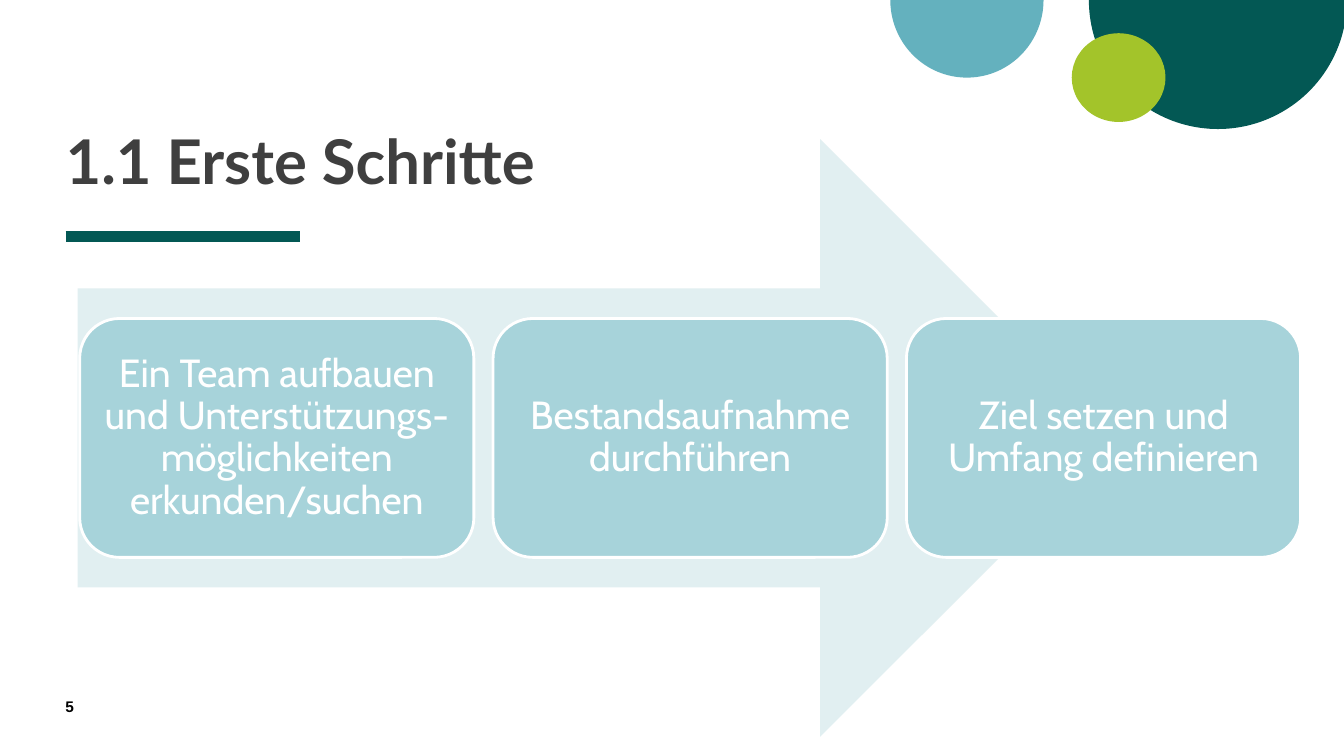
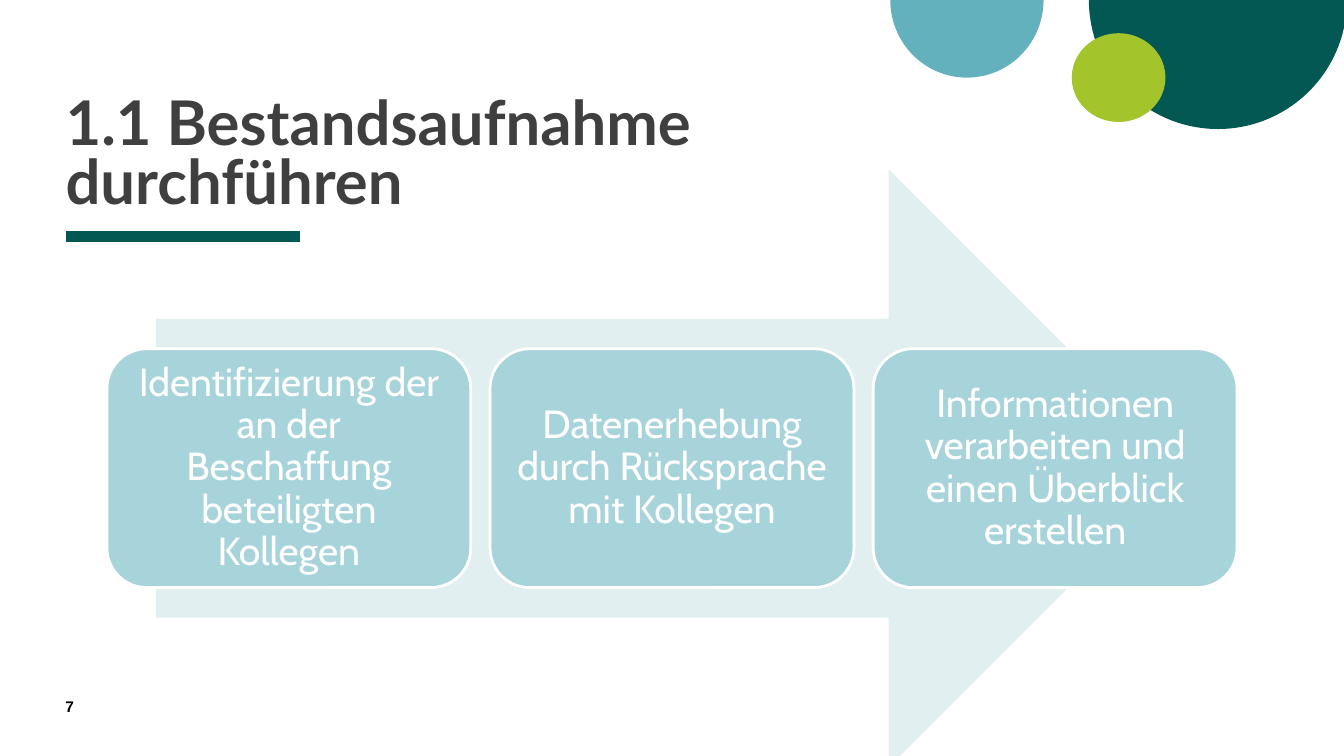
from lxml import etree
from pptx import Presentation
from pptx import util as u
from pptx.dml.color import RGBColor
from pptx.enum import shapes, text
from pptx.oxml.ns import qn

PX = 9144  # EMU per px, 100 px to the inch
HUES = {"dark": "035854", "teal": "64B1BE", "lime": "A3C42A", "pale": "E1EFF1",
        "step": "A7D3DA", "white": "FFFFFF", "head": "3F3F3F", "black": "000000"}
KIND = shapes.MSO_SHAPE
LEFT = 65
GAP = 19


def hue(name):
    return RGBColor.from_string(HUES[name])


class Deck:
    def __init__(self):
        self.prs = Presentation()
        self.prs.slide_width, self.prs.slide_height = 1333 * PX, 750 * PX
        self.slide = None

    def start(self, title, top, number):
        """Add a slide with its shared circles, rule, title and number."""
        self.slide = self.prs.slides.add_slide(self.prs.slide_layouts[5])
        for box, color in (((1080, -128, 256, 256), "dark"), ((883, -77, 152, 154), "teal")):
            half = self.shape(KIND.PIE, box, color)
            half.adjustments[0], half.adjustments[1] = 0, 108  # 0 to 180 degrees
        self.shape(KIND.OVAL, (1063, 33, 93, 88), "lime")
        self.rule(LEFT, 235, 298)
        self.title(title, top)
        self.number(number)

    def shape(self, kind, box, color):
        item = self.slide.shapes.add_shape(kind, *(n * PX for n in box))
        item.shadow.inherit = False
        item.fill.solid()
        item.fill.fore_color.rgb = hue(color)
        item.line.fill.background()
        return item

    def rule(self, left, top, right):
        line = self.slide.shapes.add_connector(
            shapes.MSO_CONNECTOR.STRAIGHT, left * PX, top * PX, right * PX, top * PX)
        line.line.color.rgb = hue("dark")
        line.line.width = u.Pt(8)
        etree.SubElement(line._element.spPr, qn("a:effectLst"))

    def label(self, item, words, font, size, color, bold=False, inset=0,
              align=text.PP_ALIGN.LEFT, anchor=text.MSO_ANCHOR.TOP, pitch=1.0):
        frame = item.text_frame
        frame.text = words
        frame.word_wrap = True
        frame.auto_size = text.MSO_AUTO_SIZE.NONE
        frame.vertical_anchor = anchor
        frame.margin_left = frame.margin_right = inset * PX
        frame.margin_top = frame.margin_bottom = inset * PX
        para = frame.paragraphs[0]
        para.alignment, para.line_spacing = align, pitch
        for run in para.runs:
            run.font.name, run.font.size, run.font.bold = font, u.Pt(size), bold
            run.font.color.rgb = hue(color)

    def title(self, words, top):
        item = self.slide.shapes.title
        item.left, item.top, item.width, item.height = (n * PX for n in (LEFT, top, 742, 174))
        self.label(item, words, "Lato", 44, "head", bold=True,
                   anchor=text.MSO_ANCHOR.BOTTOM, pitch=0.8)

    def number(self, value):
        item = self.slide.shapes.add_textbox(*(n * PX for n in (LEFT, 692, 57, 27)))
        self.label(item, str(value), "Arial", 11, "black", bold=True)

    def steps(self, arrow, left, width, names):
        """Draw a broad arrow with a row of equal steps at mid height."""
        self.shape(KIND.RIGHT_ARROW, arrow, "pale")
        top, high = arrow[1], arrow[3]
        for i, name in enumerate(names):
            box = (left + i * (width + GAP), top + round(high * 0.3), width, round(high * 0.4))
            item = self.shape(KIND.ROUNDED_RECTANGLE, box, "step")
            item.line.color.rgb = hue("white")
            item.line.width = u.Pt(2)
            self.label(item, name, "Cabin", 28, "white", inset=13, pitch=0.9,
                       align=text.PP_ALIGN.CENTER, anchor=text.MSO_ANCHOR.MIDDLE)


def main():
    deck = Deck()
    deck.start("1.1 Erste Schritte", 21, 5)
    deck.steps((77, 138, 1033, 593), 79, 391, [
        "Ein Team aufbauen und Unterstützungs-möglichkeiten erkunden/suchen",
        "Bestandsaufnahme durchführen",
        "Ziel setzen und Umfang definieren"])
    deck.start("1.1 Bestandsaufnahme durchführen", 41, 7)
    deck.steps((155, 168, 1023, 593), 106, 361, [
        "Identifizierung der an der Beschaffung beteiligten Kollegen",
        "Datenerhebung durch Rücksprache mit Kollegen",
        "Informationen verarbeiten und einen Überblick erstellen"])
    deck.prs.save("out.pptx")


if __name__ == "__main__":
    main()
